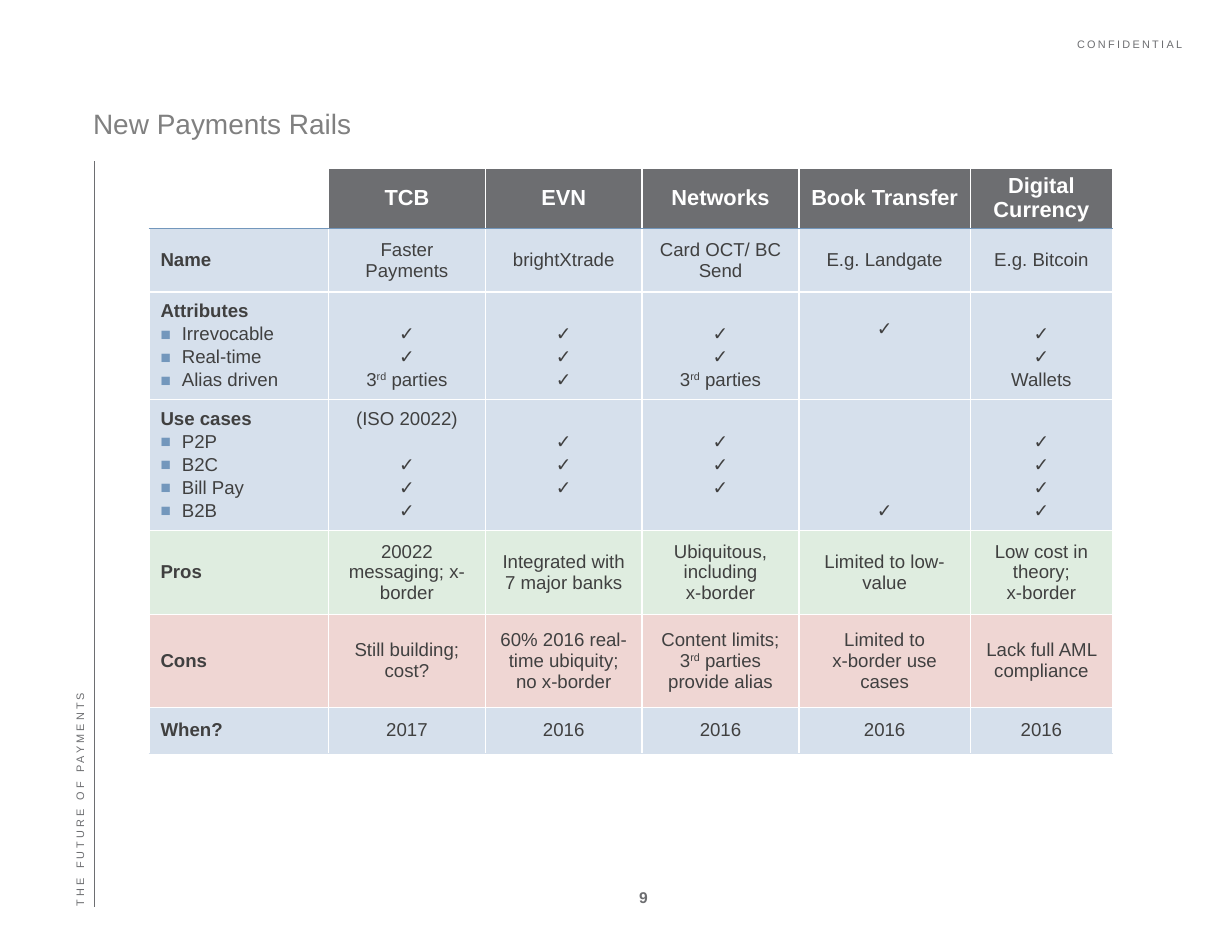
import lxml.etree
import pptx
import pptx.dml.color
import pptx.enum.shapes
import pptx.enum.text
import pptx.oxml.ns
import pptx.util

Pt = pptx.util.Pt
RGBColor = pptx.dml.color.RGBColor
Align = pptx.enum.text.PP_ALIGN
Anchor = pptx.enum.text.MSO_ANCHOR
qn = pptx.oxml.ns.qn

GRAY = RGBColor(0x6D, 0x6E, 0x71)
TITLE_GRAY = RGBColor(0x80, 0x80, 0x80)
DARK = RGBColor(0x40, 0x40, 0x40)
WHITE = RGBColor(0xFF, 0xFF, 0xFF)
STEEL = RGBColor(0x73, 0x97, 0xBC)
BLUE = RGBColor(0xD6, 0xE0, 0xEC)
GREEN = RGBColor(0xDF, 0xED, 0xE0)
RED = RGBColor(0xEF, 0xD6, 0xD3)

CHECK = "✓"
LINE = 14.8
LIST_MARGIN = 5.8
COLUMN_WIDTHS = [115.2, 100.8, 100.8, 100.8, 110.2, 91.4]
ROW_HEIGHTS = [29.5, 41, 69.1, 84.2, 54, 59.8, 29.5]
HEADERS = ["", "TCB", "EVN", "Networks", "Book Transfer", "Digital Currency"]
TEXT_ROWS = {
    1: (BLUE, ["Name", "Faster Payments", "brightXtrade", "Card OCT/ BC Send",
               "E.g. Landgate", "E.g. Bitcoin"]),
    4: (GREEN, ["Pros", "20022 messaging; x-border", "Integrated with 7 major banks",
                "Ubiquitous, including\nx-border", "Limited to low-value",
                "Low cost in theory;\nx-border"]),
    5: (RED, ["Cons", "Still building;\ncost?", "60% 2016 real-time ubiquity;\nno x-border",
              "Content limits;\n3^rd^ parties provide alias",
              "Limited to\nx-border use cases", "Lack full AML compliance"]),
    6: (BLUE, ["When?", "2017", "2016", "2016", "2016", "2016"]),
}
# Each list row: heading, items, then one (lines, free lines below) per column.
LIST_ROWS = {
    2: ("Attributes", ["Irrevocable", "Real-time", "Alias driven"],
        [([CHECK, CHECK, "3^rd^ parties"], 0), ([CHECK] * 3, 0),
         ([CHECK, CHECK, "3^rd^ parties"], 0), ([CHECK], 2.2),
         ([CHECK, CHECK, "Wallets"], 0)]),
    3: ("Use cases", ["P2P", "B2C", "Bill Pay", "B2B"],
        [(["(ISO 20022)"] + [CHECK] * 3, 0), ([CHECK] * 3, 1), ([CHECK] * 3, 1),
         ([CHECK], 0), ([CHECK] * 4, 0)]),
}


def add_text(paragraph, text, size=12, color=DARK, bold=False, align=Align.CENTER,
             line_spacing=None, tracking=0):
    """Fill a paragraph; text between carets becomes superscript."""
    paragraph.alignment = align
    if line_spacing:
        paragraph.line_spacing = line_spacing
    for index, piece in enumerate(text.split("^")):
        run = paragraph.add_run()
        run.text = piece
        font = run.font
        font.name, font.size, font.bold = "Arial", Pt(size), bold
        font.color.rgb = color
        properties = font._element
        if tracking:
            properties.set("spc", str(round(tracking * 100)))
        if index % 2:
            properties.set("baseline", "30000")


def add_lines(frame, lines, **text_format):
    for index, line in enumerate(lines):
        paragraph = frame.paragraphs[0] if index == 0 else frame.add_paragraph()
        add_text(paragraph, line, **text_format)


def prepare_frame(frame, anchor):
    frame.margin_left = frame.margin_right = frame.margin_top = frame.margin_bottom = 0
    frame.word_wrap = True
    frame.auto_size = pptx.enum.text.MSO_AUTO_SIZE.NONE
    frame.vertical_anchor = anchor


def add_label(slide, text, left, top, width, height, anchor, rotation=0, **text_format):
    box = slide.shapes.add_textbox(Pt(left), Pt(top), Pt(width), Pt(height))
    box.rotation = rotation
    prepare_frame(box.text_frame, anchor)
    add_text(box.text_frame.paragraphs[0], text, color=GRAY, **text_format)


def set_title(slide, text):
    title = slide.shapes.title
    title.left, title.top, title.width, title.height = Pt(59.8), Pt(41.8), Pt(648), Pt(48.2)
    prepare_frame(title.text_frame, Anchor.BOTTOM)
    add_text(title.text_frame.paragraphs[0], text, size=18, color=TITLE_GRAY,
             align=Align.LEFT, line_spacing=Pt(27.9))


def add_margin_line(slide):
    line = slide.shapes.add_connector(
        pptx.enum.shapes.MSO_CONNECTOR.STRAIGHT, Pt(60.5), Pt(103.7), Pt(60.5), Pt(583.2))
    line.line.color.rgb = GRAY
    line.line.width = Pt(0.35)
    lxml.etree.SubElement(line._element.spPr, qn("a:effectLst"))


def add_bullet(paragraph):
    properties = paragraph._p.get_or_add_pPr()
    properties.set("marL", str(Pt(13.7)))
    properties.set("indent", str(-Pt(13.7)))
    color = lxml.etree.SubElement(properties, qn("a:buClr"))
    lxml.etree.SubElement(color, qn("a:srgbClr"), val=str(STEEL))
    lxml.etree.SubElement(properties, qn("a:buSzPct"), val="92000")
    lxml.etree.SubElement(properties, qn("a:buFont"), typeface="Arial")
    lxml.etree.SubElement(properties, qn("a:buChar"), char="■")


def style_cell(cell, fill, top=(WHITE, 1), bottom=(WHITE, 1)):
    """Set borders, each a colour and a width, and then the fill."""
    properties = cell._tc.get_or_add_tcPr()
    borders = {"a:lnL": (WHITE, 1), "a:lnR": (WHITE, 1), "a:lnT": top, "a:lnB": bottom}
    for tag, (color, width) in borders.items():
        border = lxml.etree.SubElement(properties, qn(tag), w=str(Pt(width)))
        solid = lxml.etree.SubElement(border, qn("a:solidFill"))
        lxml.etree.SubElement(solid, qn("a:srgbClr"), val=str(color))
    if fill is None:
        cell.fill.background()
    else:
        cell.fill.solid()
        cell.fill.fore_color.rgb = fill
    cell.vertical_anchor = Anchor.MIDDLE
    cell.margin_left = cell.margin_right = Pt(7.2)
    cell.margin_top = cell.margin_bottom = Pt(3.6)


def fill_header(table):
    for column, text in enumerate(HEADERS):
        cell = table.cell(0, column)
        style_cell(cell, GRAY if text else None, bottom=(STEEL, 0.5))
        if text:
            add_lines(cell.text_frame, [text], size=14, color=WHITE, bold=True)


def fill_text_row(table, row, fill, texts):
    top = (STEEL, 0.5) if row == 1 else (WHITE, 1)
    bottom = (BLUE, 1) if row == len(ROW_HEIGHTS) - 1 else (WHITE, 1)
    for column, text in enumerate(texts):
        cell = table.cell(row, column)
        style_cell(cell, fill, top, bottom)
        add_lines(cell.text_frame, text.split("\n"), bold=column == 0,
                  align=Align.CENTER if column else Align.LEFT)


def fill_list_row(table, row, heading, items, columns):
    label = table.cell(row, 0)
    style_cell(label, BLUE)
    add_lines(label.text_frame, [heading], bold=True, align=Align.LEFT)
    for item in items:
        paragraph = label.text_frame.add_paragraph()
        add_bullet(paragraph)
        add_text(paragraph, item, align=Align.LEFT, line_spacing=1.1)
    for column, (lines, free_lines) in enumerate(columns, start=1):
        cell = table.cell(row, column)
        style_cell(cell, BLUE)
        cell.vertical_anchor = Anchor.BOTTOM
        cell.margin_bottom = Pt(LIST_MARGIN + free_lines * LINE)
        add_lines(cell.text_frame, lines, line_spacing=1.1)
        if lines[0].startswith("("):
            cell.text_frame.paragraphs[0].line_spacing = 1.0
            cell.text_frame.paragraphs[1].space_before = Pt(LINE)


def add_rails_table(slide):
    table = slide.shapes.add_table(
        len(ROW_HEIGHTS), len(COLUMN_WIDTHS), Pt(96), Pt(108),
        Pt(sum(COLUMN_WIDTHS)), Pt(sum(ROW_HEIGHTS))).table
    table.first_row = table.horz_banding = False
    for column, width in zip(table.columns, COLUMN_WIDTHS):
        column.width = Pt(width)
    for row, height in zip(table.rows, ROW_HEIGHTS):
        row.height = Pt(height)
    fill_header(table)
    for row, content in TEXT_ROWS.items():
        fill_text_row(table, row, *content)
    for row, content in LIST_ROWS.items():
        fill_list_row(table, row, *content)


def main():
    presentation = pptx.Presentation()
    presentation.slide_width, presentation.slide_height = Pt(792), Pt(612)
    slide = presentation.slides.add_slide(presentation.slide_layouts[5])
    add_margin_line(slide)
    add_label(slide, "CONFIDENTIAL", 659, 27.4, 101, 5, Anchor.TOP, size=7,
              align=Align.RIGHT, line_spacing=Pt(5), tracking=1.5)
    set_title(slide, "New Payments Rails")
    add_label(slide, "9", 407.5, 571, 12.2, 12.2, Anchor.MIDDLE, size=10, bold=True)
    add_rails_table(slide)
    add_label(slide, "THE FUTURE OF PAYMENTS", -167.8, 359.3, 435.6, 10.8, Anchor.BOTTOM,
              rotation=270, size=7, align=Align.LEFT, tracking=2)
    presentation.save("out.pptx")


if __name__ == "__main__":
    main()
